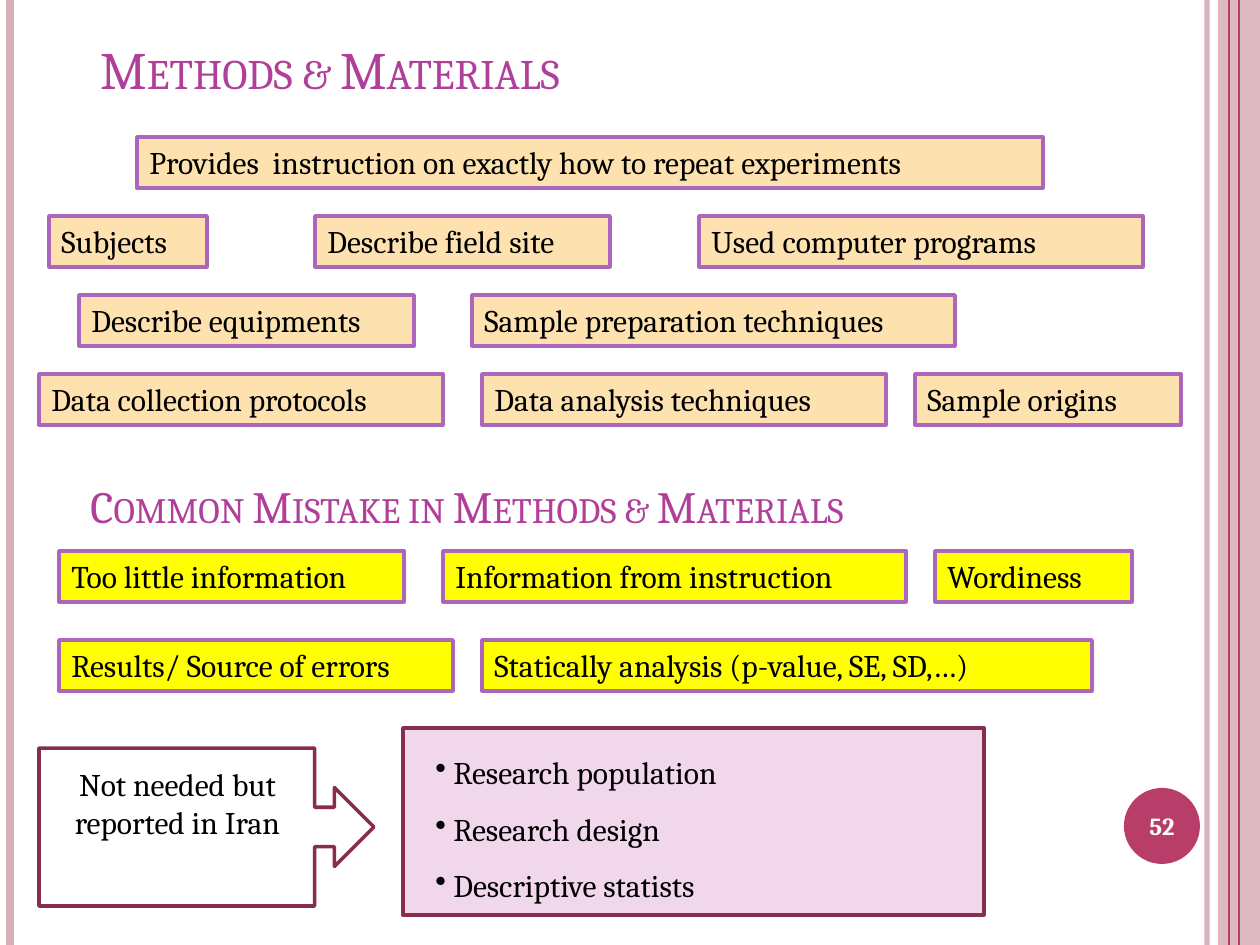
from lxml import etree
from pptx import Presentation
from pptx.dml.color import RGBColor
from pptx.enum.shapes import MSO_CONNECTOR, MSO_SHAPE
from pptx.enum.text import MSO_ANCHOR, PP_ALIGN
from pptx.oxml.ns import qn
from pptx.util import Emu, Pt

PX = 914400 / 126
FONT = "Cambria"
RECTANGLE = MSO_SHAPE.RECTANGLE
STRAIGHT = MSO_CONNECTOR.STRAIGHT
TOP, MIDDLE, BOTTOM = MSO_ANCHOR.TOP, MSO_ANCHOR.MIDDLE, MSO_ANCHOR.BOTTOM
LEFT, CENTER = PP_ALIGN.LEFT, PP_ALIGN.CENTER

BLACK = RGBColor(0x00, 0x00, 0x00)
WHITE = RGBColor(0xFF, 0xFF, 0xFF)
DUSTY_PINK = RGBColor(0xD8, 0xAF, 0xB9)
CRIMSON = RGBColor(0xB8, 0x3D, 0x68)
MAGENTA = RGBColor(0xB1, 0x3F, 0x9A)
PEACH = RGBColor(0xFD, 0xE2, 0xB0)
YELLOW = RGBColor(0xFF, 0xFF, 0x00)
PURPLE = RGBColor(0xAC, 0x66, 0xBB)
MAROON = RGBColor(0x88, 0x2D, 0x4D)
LILAC = RGBColor(0xF1, 0xD7, 0xEC)

presentation = Presentation()
presentation.slide_width = Emu(round(1260 * PX))
presentation.slide_height = Emu(round(945 * PX))
slide = presentation.slides.add_slide(presentation.slide_layouts[6])
shapes = slide.shapes


def add_box(kind, box, fill, line=None):
    shape = shapes.add_shape(kind, *[Emu(round(length * PX)) for length in box])
    shape.shadow.inherit = False
    shape.fill.solid()
    shape.fill.fore_color.rgb = fill
    if line is None:
        shape.line.fill.background()
    else:
        shape.line.color.rgb = line
        shape.line.width = Pt(2)
    return shape


def write(shape, text, size=18, color=BLACK, align=LEFT, anchor=TOP):
    frame = shape.text_frame
    frame.word_wrap = True
    frame.vertical_anchor = anchor
    frame.text = text
    for paragraph in frame.paragraphs:
        paragraph.alignment = align
        for run in paragraph.runs:
            run.font.name = FONT
            run.font.size = Pt(size)
            run.font.color.rgb = color
    return frame


# Side stripes: (x, colour, width in points, opacity in percent)
band = add_box(RECTANGLE, (1218, 0, 42, 945), DUSTY_PINK)
band_color = band.fill._xPr.find(qn("a:solidFill"))[0]
etree.SubElement(band_color, qn("a:alpha"), val="87000")

for x, color, width, opacity in [
    (1207, DUSTY_PINK, 3, 93),
    (10, DUSTY_PINK, 4.5, 100),
    (1239, CRIMSON, 0.75, 100),
    (1229, CRIMSON, 0.75, 100),
]:
    position = Emu(round(x * PX))
    stripe = shapes.add_connector(STRAIGHT, position, 0, position, presentation.slide_height)
    stripe.line.color.rgb = color
    stripe.line.width = Pt(width)
    properties = stripe._element.spPr
    if opacity < 100:
        line_color = properties.find(qn("a:ln")).find(qn("a:solidFill"))[0]
        etree.SubElement(line_color, qn("a:alpha"), val=str(opacity * 1000))
    etree.SubElement(properties, qn("a:effectLst"))

# Slide number
add_box(MSO_SHAPE.OVAL, (1124, 788, 76, 76), CRIMSON)
number_box = shapes.add_textbox(*[Emu(round(n * PX)) for n in (1120, 790, 84, 72)])
number_frame = write(number_box, "52", 14, WHITE, CENTER, MIDDLE)
number_frame.paragraphs[0].runs[0].font.bold = True

# Headings in small capitals
for x, y, text, size, spacing in [
    (88, 29, "Methods & Materials", 30, 1.0),
    (78, 462, "Common Mistake in Methods & Materials", 25.5, 0.9),
]:
    heading = shapes.add_textbox(*[Emu(round(n * PX)) for n in (x, y, 1029, 77)])
    paragraph = write(heading, text, size, MAGENTA, anchor=BOTTOM).paragraphs[0]
    paragraph.line_spacing = spacing
    paragraph.runs[0].font._element.set("cap", "small")

# Rows of labels: (y, fill, [(x, width, text), ...])
LABEL_HEIGHT = 51
label_rows = [
    (137, PEACH, [(137, 906, "Provides  instruction on exactly how to repeat experiments")]),
    (216, PEACH, [(49, 158, "Subjects"), (315, 295, "Describe field site"),
                  (699, 444, "Used computer programs")]),
    (295, PEACH, [(79, 335, "Describe equipments"),
                  (472, 483, "Sample preparation techniques")]),
    (374, PEACH, [(39, 404, "Data collection protocols"),
                  (482, 404, "Data analysis techniques"), (915, 266, "Sample origins")]),
    (551, YELLOW, [(59, 345, "Too little information"),
                   (443, 463, "Information from instruction"), (935, 197, "Wordiness")]),
    (640, YELLOW, [(59, 394, "Results/ Source of errors"),
                   (482, 610, "Statically analysis (p-value, SE, SD,…)")]),
]
for y, fill, labels in label_rows:
    for x, width, text in labels:
        write(add_box(RECTANGLE, (x, y, width, LABEL_HEIGHT), fill, PURPLE), text)

# Callout
callout = add_box(MSO_SHAPE.RIGHT_ARROW_CALLOUT, (39, 748, 335, 158), WHITE, MAROON)
callout.adjustments[3] = 0.823
callout_text = shapes.add_textbox(*[Emu(round(n * PX)) for n in (59, 759, 237, 127)])
write(callout_text, "Not needed but reported in Iran", align=CENTER)

# Bulleted list
add_box(RECTANGLE, (403, 728, 581, 187), LILAC, MAROON)
list_box = shapes.add_textbox(*[Emu(round(n * PX)) for n in (423, 728, 542, 178)])
items = ["Research population", "Research design", "Descriptive statists"]
indent = round(18 * PX)
for paragraph in write(list_box, "\n".join(items)).paragraphs:
    paragraph.line_spacing = 1.5
    properties = paragraph._p.get_or_add_pPr()
    properties.set("marL", str(indent))
    properties.set("indent", str(-indent))
    etree.SubElement(properties, qn("a:buChar"), char="•")

presentation.save("out.pptx")
